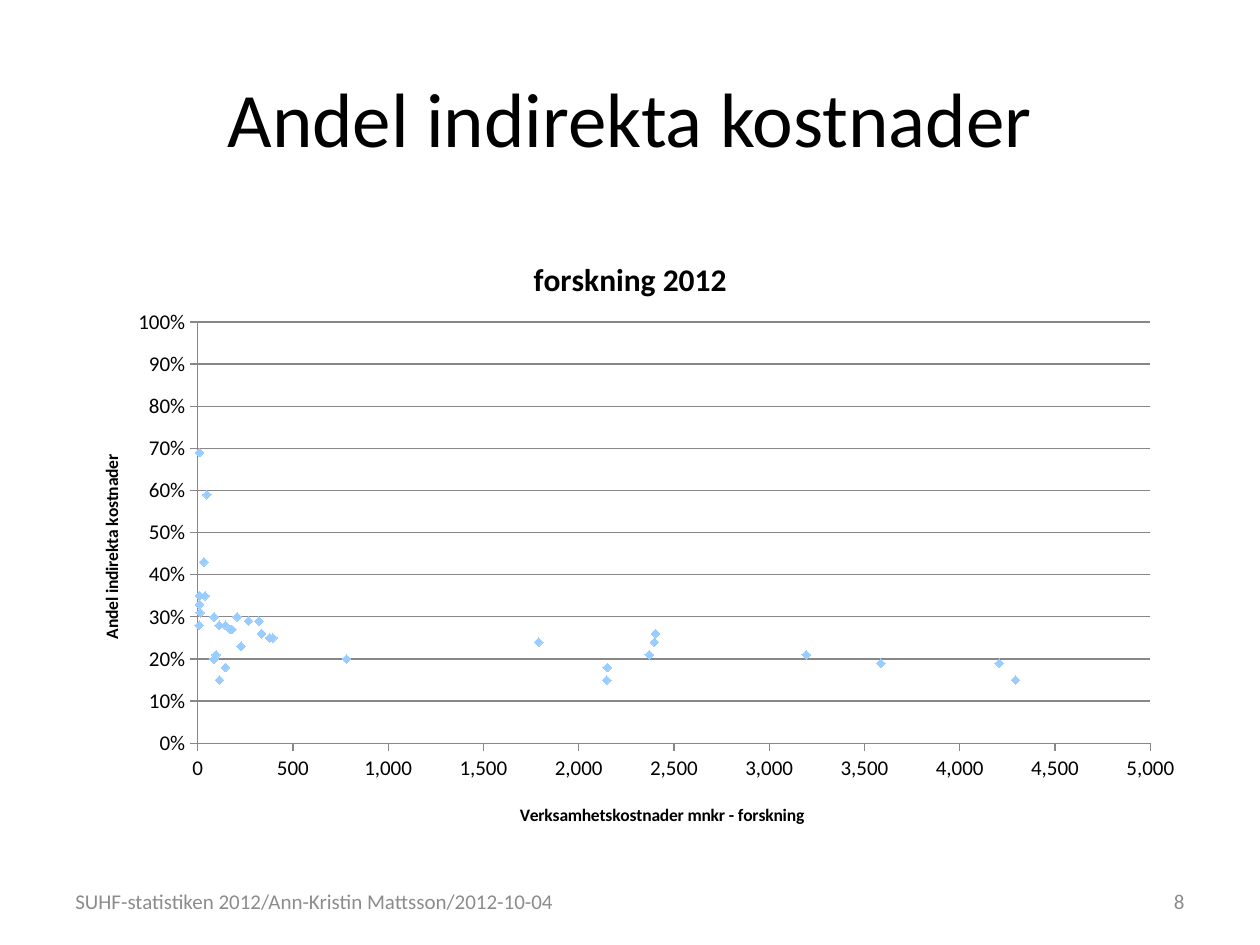
"""Build a slide with a scatter chart of indirect cost shares in research."""
from lxml import etree
from pptx import Presentation
from pptx import util as u
from pptx.chart.data import XyChartData
from pptx.dml.color import RGBColor
from pptx.enum import chart as ch, text as t
from pptx.oxml.ns import qn

BLACK = RGBColor(0, 0, 0)
GRAY = RGBColor(0x8C, 0x8C, 0x8C)
LINE = RGBColor(0x87, 0x87, 0x87)
SKY = RGBColor(0x99, 0xCC, 0xFF)

COSTS_AND_SHARES = [
    (180, 0.27), (2150, 0.18), (10, 0.33), (32, 0.43), (3195, 0.21), (113, 0.28),
    (97, 0.21), (39, 0.35), (115, 0.15), (146, 0.18), (146, 0.28), (207, 0.30),
    (49, 0.59), (86, 0.20), (87, 0.30), (267, 0.29), (13, 0.31), (4293, 0.15),
    (10, 0.69), (10, 0.35), (2398, 0.24), (1790, 0.24), (395, 0.25), (782, 0.20),
    (4208, 0.19), (228, 0.23), (172, 0.27), (378, 0.25), (8, 0.28), (10, 0.35),
    (322, 0.29), (2370, 0.21), (2403, 0.26), (2147, 0.15), (3586, 0.19), (336, 0.26),
]


def write(frame, words, size=12, color=BLACK, bold=False, align=None, font="Calibri"):
    paragraph = frame.paragraphs[0]
    paragraph.alignment = align
    run = paragraph.add_run()
    run.text = words
    run.font.name, run.font.size, run.font.bold = font, u.Pt(size), bold
    run.font.color.rgb = color


def place(layout, **fractions):
    for child in list(layout):
        layout.remove(child)
    manual = etree.SubElement(layout, qn("c:manualLayout"))
    if "w" in fractions:
        etree.SubElement(manual, qn("c:layoutTarget")).set("val", "inner")
    for side in "xy":
        etree.SubElement(manual, qn(f"c:{side}Mode")).set("val", "edge")
    for name, value in fractions.items():
        etree.SubElement(manual, qn(f"c:{name}")).set("val", str(value))


class Deck:
    def __init__(self):
        self.show = Presentation()
        self.show.slide_width, self.show.slide_height = u.Cm(25.4), u.Cm(19.05)
        self.slide = self.show.slides.add_slide(self.show.slide_layouts[6])

    def text(self, box, words, **style):
        frame = self.slide.shapes.add_textbox(*map(u.Cm, box)).text_frame
        frame.word_wrap = True
        frame.vertical_anchor = t.MSO_ANCHOR.MIDDLE
        write(frame, words, **style)

    def axis(self, axis, title, top, step, number_format, grid):
        axis.minimum_scale, axis.maximum_scale, axis.major_unit = 0, top, step
        axis.has_major_gridlines = grid
        if grid:
            axis.major_gridlines.format.line.color.rgb = LINE
        axis.major_tick_mark = ch.XL_TICK_MARK.OUTSIDE
        axis.format.line.color.rgb = LINE
        axis.tick_labels.number_format = number_format
        axis.tick_labels.number_format_is_linked = False
        axis.tick_labels.font.size = u.Pt(12)
        write(axis.axis_title.text_frame, title, size=10, bold=True)

    def scatter(self, box, title, points):
        data = XyChartData()
        shares = data.add_series("Series 1")
        for cost, share in points:
            shares.add_data_point(cost * 1000, share)
        chart = self.slide.shapes.add_chart(
            ch.XL_CHART_TYPE.XY_SCATTER, *map(u.Cm, box), data).chart
        chart.has_legend = False
        chart.font.name, chart.font.size = "Calibri", u.Pt(10)
        chart.font.color.rgb = BLACK
        write(chart.chart_title.text_frame, title, size=18, bold=True)
        plot = chart.plots[0]
        plot.vary_by_categories = False
        series = plot.series[0]
        series.smooth = False
        series.format.line.fill.background()
        series.marker.style, series.marker.size = ch.XL_MARKER_STYLE.DIAMOND, 5
        series.marker.format.fill.solid()
        series.marker.format.fill.fore_color.rgb = SKY
        series.marker.format.line.color.rgb = SKY
        self.axis(chart.category_axis, "Verksamhetskostnader mnkr - forskning",
                  5000000, 500000, "#,##0,", False)
        self.axis(chart.value_axis, "Andel indirekta kostnader", 1, 0.1, "0%", True)
        for title_layout, (x, y) in zip(chart.element.xpath(".//c:title/c:layout"),
                                        [(0.41, 0.05), (0.4, 0.93), (0.03, 0.37)]):
            place(title_layout, x=x, y=y)
        for plot_layout in chart.element.xpath(".//c:plotArea/c:layout"):
            place(plot_layout, x=0.12, y=0.15, w=0.84, h=0.68)


def main():
    deck = Deck()
    deck.text((1.27, 0.76, 22.86, 3.18), "Andel indirekta kostnader",
              size=44, align=t.PP_ALIGN.CENTER)
    deck.scatter((1.27, 4.45, 22.86, 12.57), "forskning 2012", COSTS_AND_SHARES)
    deck.text((1.27, 17.65, 10.24, 1.02),
              "SUHF-statistiken 2012/Ann-Kristin Mattsson/2012-10-04", color=GRAY)
    deck.text((20.5, 17.65, 3.63, 1.02), "8", color=GRAY, align=t.PP_ALIGN.RIGHT)
    deck.show.save("out.pptx")


if __name__ == "__main__":
    main()
